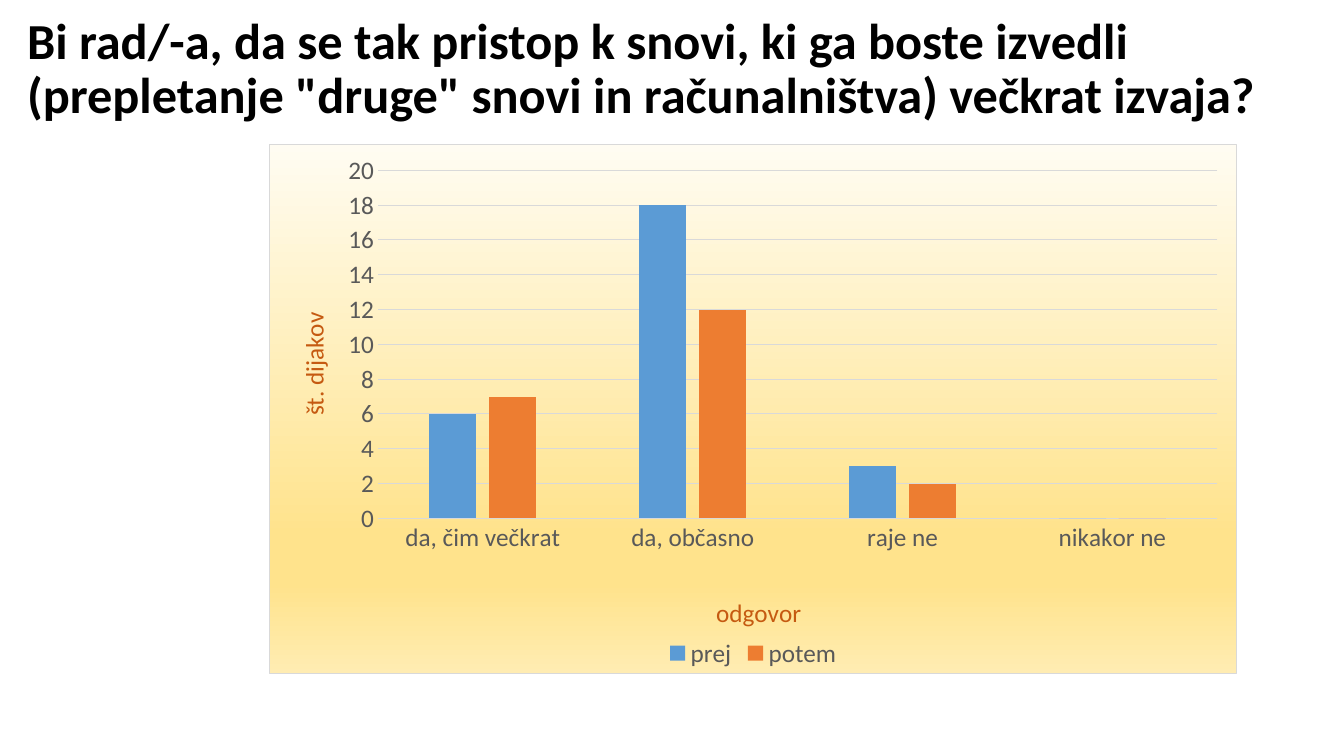
from lxml.etree import SubElement
from pptx import Presentation
from pptx.chart.data import CategoryChartData
from pptx.dml.color import RGBColor
from pptx.enum.chart import XL_CHART_TYPE, XL_LEGEND_POSITION, XL_TICK_MARK
from pptx.enum.text import MSO_ANCHOR, MSO_AUTO_SIZE, PP_ALIGN
from pptx.oxml import parse_xml
from pptx.oxml.ns import nsdecls, qn
from pptx.util import Emu, Inches, Pt

# Content
HEAD = ('Bi rad/-a, da se tak pristop k snovi, ki ga boste izvedli '
        '(prepletanje "druge" snovi in računalništva) večkrat izvaja?')
CATS = ["da, čim večkrat", "da, občasno", "raje ne", "nikakor ne"]
ROWS = [("prej", (6, 18, 3, 0)), ("potem", (7, 12, 2, 0))]
NAMES = {"x": "odgovor", "y": "št. dijakov"}

# Theme
THEME = {
    "font": "Calibri", "head": 36, "text": 18, "line": 0.75,
    "black": "000000", "grey": "595959", "rule": "D9D9D9", "name": "C55A11",
    "bars": ["5B9BD5", "ED7D31"],
    "fade": [(0, "FFFCF2"), (74, "FFE38C"), (83, "FFE38C"), (100, "FFECB2")],
}

# Places in px: left, top, width, height
PX = 100.8
HEAD_BOX = (17, 17, 1309, 113)
CHART_BOX = (269, 144, 968, 530)
PLOT_BOX = (377, 170, 840, 349)
NAME_AT = {"x": (711, 591), "y": (291, 308)}


def emu(px):
    return Emu(round(px * 914400 / PX))


def rgb(key):
    return RGBColor.from_string(THEME.get(key, key))


def put(thing, **form):
    for key, val in form.items():
        setattr(thing, key, val)


def style(font, tone, size="text", bold=False):
    put(font, name=THEME["font"], size=Pt(THEME[size]), bold=bold)
    font.color.rgb = rgb(tone)


def rule(line):
    line.color.rgb = rgb("rule")
    line.width = Pt(THEME["line"])


def place(node, box, inner=False):
    """Fix a chart part at a px box, as shares of the chart frame."""
    left, top, wide, high = CHART_BOX
    shares = [(box[0] - left) / wide, (box[1] - top) / high]
    shares += [n / full for n, full in zip(box[2:], (wide, high))]
    for old in node.findall(qn("c:layout")):
        node.remove(old)
    frame = parse_xml(f"<c:layout {nsdecls('c')}><c:manualLayout/></c:layout>")
    if inner:
        SubElement(frame[0], qn("c:layoutTarget")).set("val", "inner")
    for tag in ("xMode", "yMode"):
        SubElement(frame[0], qn("c:" + tag)).set("val", "edge")
    for tag, share in zip("xywh", shares):
        SubElement(frame[0], qn("c:" + tag)).set("val", f"{share:.3f}")
    text = node.find(qn("c:tx"))
    if text is None:
        node.insert(0, frame)
    else:
        text.addnext(frame)


# Slide
deck = Presentation()
put(deck, slide_width=Inches(13.33), slide_height=Inches(7.5))
slide = deck.slides.add_slide(deck.slide_layouts[5])

# Title
head = slide.shapes.title
put(head, **dict(zip(("left", "top", "width", "height"), map(emu, HEAD_BOX))))
put(head.text_frame, text=HEAD, word_wrap=True, auto_size=MSO_AUTO_SIZE.NONE,
    vertical_anchor=MSO_ANCHOR.BOTTOM)
para = head.text_frame.paragraphs[0]
put(para, alignment=PP_ALIGN.LEFT, line_spacing=0.9)
style(para.runs[0].font, "black", "head", True)

# Chart and bars
data = CategoryChartData()
data.categories = CATS
for name, vals in ROWS:
    data.add_series(name, vals)
chart = slide.shapes.add_chart(
    XL_CHART_TYPE.COLUMN_CLUSTERED, *map(emu, CHART_BOX), data).chart
put(chart, has_title=False, has_legend=True)
style(chart.font, "grey")
plot = chart.plots[0]
put(plot, gap_width=219, overlap=-27, vary_by_categories=False)
for bar, tone in zip(plot.series, THEME["bars"]):
    bar.format.fill.solid()
    bar.format.fill.fore_color.rgb = rgb(tone)

# Axes
axes = {"x": chart.category_axis, "y": chart.value_axis}
for key, axis in axes.items():
    put(axis, major_tick_mark=XL_TICK_MARK.NONE,
        minor_tick_mark=XL_TICK_MARK.NONE, has_title=True)
    style(axis.tick_labels.font, "grey")
    title = axis.axis_title
    title.text_frame.text = NAMES[key]
    style(title.text_frame.paragraphs[0].runs[0].font, "name")
    place(title._element, NAME_AT[key])
axes["y"].axis_title.text_frame._txBody.bodyPr.set("rot", "-5400000")
put(axes["y"], minimum_scale=0, maximum_scale=20, major_unit=2)
rule(axes["x"].format.line)
rule(axes["y"].major_gridlines.format.line)
axes["y"].format.line.fill.background()

# Legend and plot area
put(chart.legend, position=XL_LEGEND_POSITION.BOTTOM, include_in_layout=False)
style(chart.legend.font, "grey")
root = chart._chartSpace
place(root.chart.plotArea, PLOT_BOX, inner=True)

# Faded chart background with a thin border
stops = "".join(f'<a:gs pos="{pos * 1000}"><a:srgbClr val="{tone}"/></a:gs>'
                for pos, tone in THEME["fade"])
root.chart.addnext(parse_xml(
    f'<c:spPr {nsdecls("c", "a")}><a:gradFill><a:gsLst>{stops}</a:gsLst>'
    f'<a:lin ang="5400000" scaled="0"/></a:gradFill>'
    f'<a:ln w="{Pt(THEME["line"])}"><a:solidFill>'
    f'<a:srgbClr val="{THEME["rule"]}"/></a:solidFill></a:ln></c:spPr>'))

deck.save("out.pptx")
